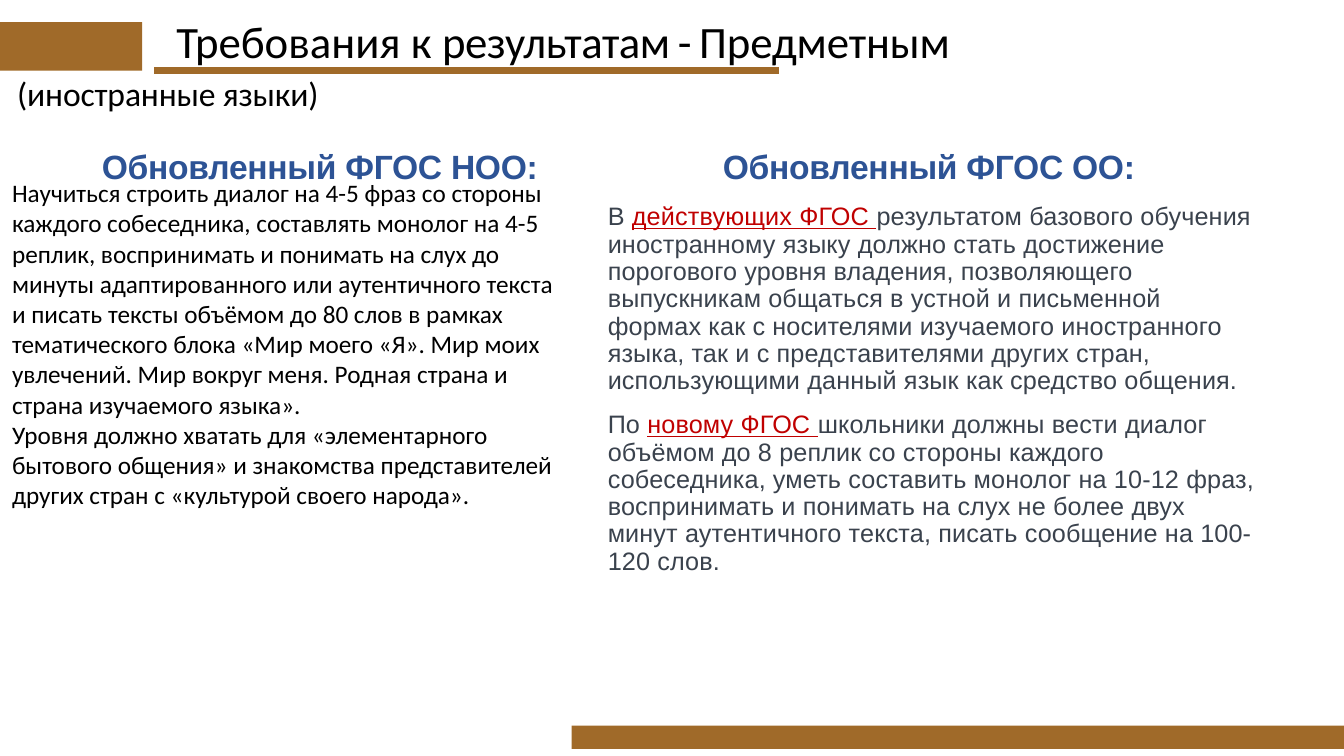
from lxml import etree
from pptx import Presentation
from pptx import util as u
from pptx.dml.color import RGBColor
from pptx.enum import shapes, text
from pptx.oxml import ns

BROWN = RGBColor(0xA0, 0x6A, 0x29)
BLACK = RGBColor(0x00, 0x00, 0x00)
BLUE = RGBColor(0x2D, 0x53, 0x95)
SLATE = RGBColor(0x3A, 0x42, 0x4D)
RED = RGBColor(0xC0, 0x00, 0x00)

TIGHT = (0, 0.01, 0, 0)
PADDED = (0.1, 0.05, 0.1, 0.05)


class SlideBuilder:
    def __init__(self, presentation):
        self.slide = presentation.slides.add_slide(presentation.slide_layouts[5])

    def band(self, *box):
        shape = self.slide.shapes.add_shape(
            shapes.MSO_SHAPE.RECTANGLE, *map(u.Inches, box))
        shape.shadow.inherit = False
        shape.fill.solid()
        shape.fill.fore_color.rgb = BROWN
        shape.line.fill.background()

    def rule(self, left, right, top, width):
        line = self.slide.shapes.add_connector(
            shapes.MSO_CONNECTOR.STRAIGHT, u.Inches(left), u.Inches(top),
            u.Inches(right), u.Inches(top))
        line.line.color.rgb = BROWN
        line.line.width = u.Pt(width)
        etree.SubElement(line._element.spPr, ns.qn("a:effectLst"))

    def title(self, box, runs, **style):
        shape = self.slide.shapes.title
        shape.left, shape.top, shape.width, shape.height = map(u.Inches, box)
        # The title text lies over the rule beneath it.
        self.slide.shapes._spTree.append(shape._element)
        self.fill_text(shape, [runs], TIGHT, **style)
        shape.text_frame.vertical_anchor = text.MSO_ANCHOR.MIDDLE

    def text_box(self, box, paragraphs, insets=TIGHT, **style):
        shape = self.slide.shapes.add_textbox(*map(u.Inches, box))
        self.fill_text(shape, paragraphs, insets, **style)

    def fill_text(self, shape, paragraphs, insets, size, font="Calibri", color=BLACK,
                  bold=False, line_spacing=None, space_after=0, tab=None):
        """Fill a shape; each run is (text, letter spacing in points, accent flag)."""
        frame = shape.text_frame
        frame.word_wrap = True
        frame.auto_size = text.MSO_AUTO_SIZE.SHAPE_TO_FIT_TEXT
        (frame.margin_left, frame.margin_top,
         frame.margin_right, frame.margin_bottom) = map(u.Inches, insets)
        for index, runs in enumerate(paragraphs):
            paragraph = frame.add_paragraph() if index else frame.paragraphs[0]
            paragraph.alignment = text.PP_ALIGN.LEFT
            paragraph.space_before = u.Pt(0)
            paragraph.space_after = u.Pt(space_after)
            if line_spacing:
                paragraph.line_spacing = u.Pt(line_spacing)
            if tab:
                tabs = etree.SubElement(paragraph._p.get_or_add_pPr(), ns.qn("a:tabLst"))
                etree.SubElement(tabs, ns.qn("a:tab"), pos=str(u.Inches(tab)), algn="l")
            for words, spacing, accent in runs:
                run = paragraph.add_run()
                run.text = words
                run.font.name = font
                run.font.size = u.Pt(size)
                run.font.bold = bold
                run.font.underline = accent
                run.font.color.rgb = RED if accent else color
                run._r.get_or_add_rPr().set("spc", str(round(spacing * 100)))


def main():
    presentation = Presentation()
    presentation.slide_width = u.Inches(13.33)
    presentation.slide_height = u.Inches(7.5)
    builder = SlideBuilder(presentation)

    builder.band(0, 0.22, 1.41, 0.48)
    builder.rule(1.53, 7.73, 0.7, 5)
    builder.title((1.75, 0.12, 11.3, 0.55), [
        ("Требования к ", 0, False), ("результатам", -0.4, False),
        (" - ", -1.8, False), ("Предметным", -0.1, False)], size=32)
    builder.band(5.67, 7.2, 7.66, 0.23)
    builder.text_box(
        (1.01, 1.44, 10.93, 0.42),
        [[("Обновленный ФГОС НОО:\tОбновленный ФГОС ОО:", -0.2, False)]],
        size=24, font="Arial", color=BLUE, bold=True, tab=6.16)
    builder.text_box((0.12, 1.75, 5.43, 3.66), [
        [("Научиться строить диалог на 4-5 фраз со стороны каждого собеседника, "
          "составлять монолог на 4-5 реплик, воспринимать и понимать на слух до "
          "минуты адаптированного или аутентичного текста и писать тексты объёмом "
          "до 80 слов в рамках тематического блока «Мир моего «Я». Мир моих "
          "увлечений. Мир вокруг меня. Родная страна и страна изучаемого языка».",
          0, False)],
        [("Уровня должно хватать для «элементарного бытового общения» и знакомства "
          "представителей других стран с «культурой своего народа».", 0, False)],
    ], size=18)
    builder.text_box((0, 0.67, 3.49, 0.5),
                     [[("(иностранные языки", -0.1, False), (")", -0.2, False)]],
                     insets=(0.17, 0.05, 0.1, 0.05), size=24)
    builder.text_box((5.93, 1.97, 6.67, 3.92), [
        [("В ", 0.1, False), ("действующих ФГОС ", 0.1, True),
         ("результатом базового обучения иностранному языку должно стать достижение "
          "порогового уровня владения, позволяющего выпускникам общаться в устной и "
          "письменной формах как с носителями изучаемого иностранного языка, так и с "
          "представителями других стран, использующими данный язык как средство "
          "общения.", 0.1, False)],
        [("По ", 0.1, False), ("новому ФГОС ", 0.1, True),
         ("школьники должны вести диалог объёмом до 8 реплик со стороны каждого "
          "собеседника, уметь составить монолог на 10-12 фраз, воспринимать и "
          "понимать на слух не более двух минут аутентичного текста, писать "
          "сообщение на 100-120 слов.", 0.1, False)],
    ], insets=PADDED, size=18, font="Arial", color=SLATE,
        line_spacing=19.5, space_after=12)

    presentation.save("out.pptx")


if __name__ == "__main__":
    main()
